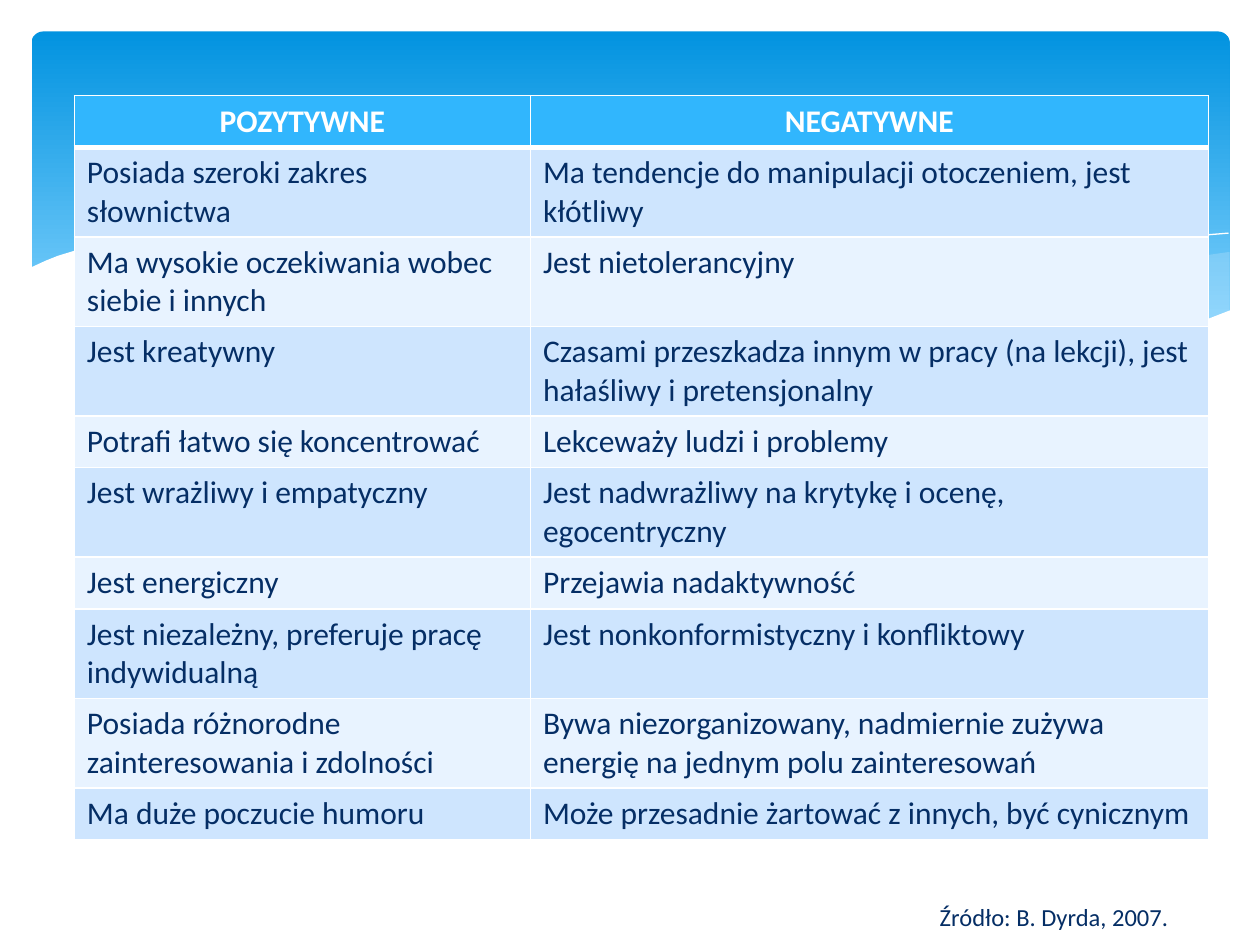
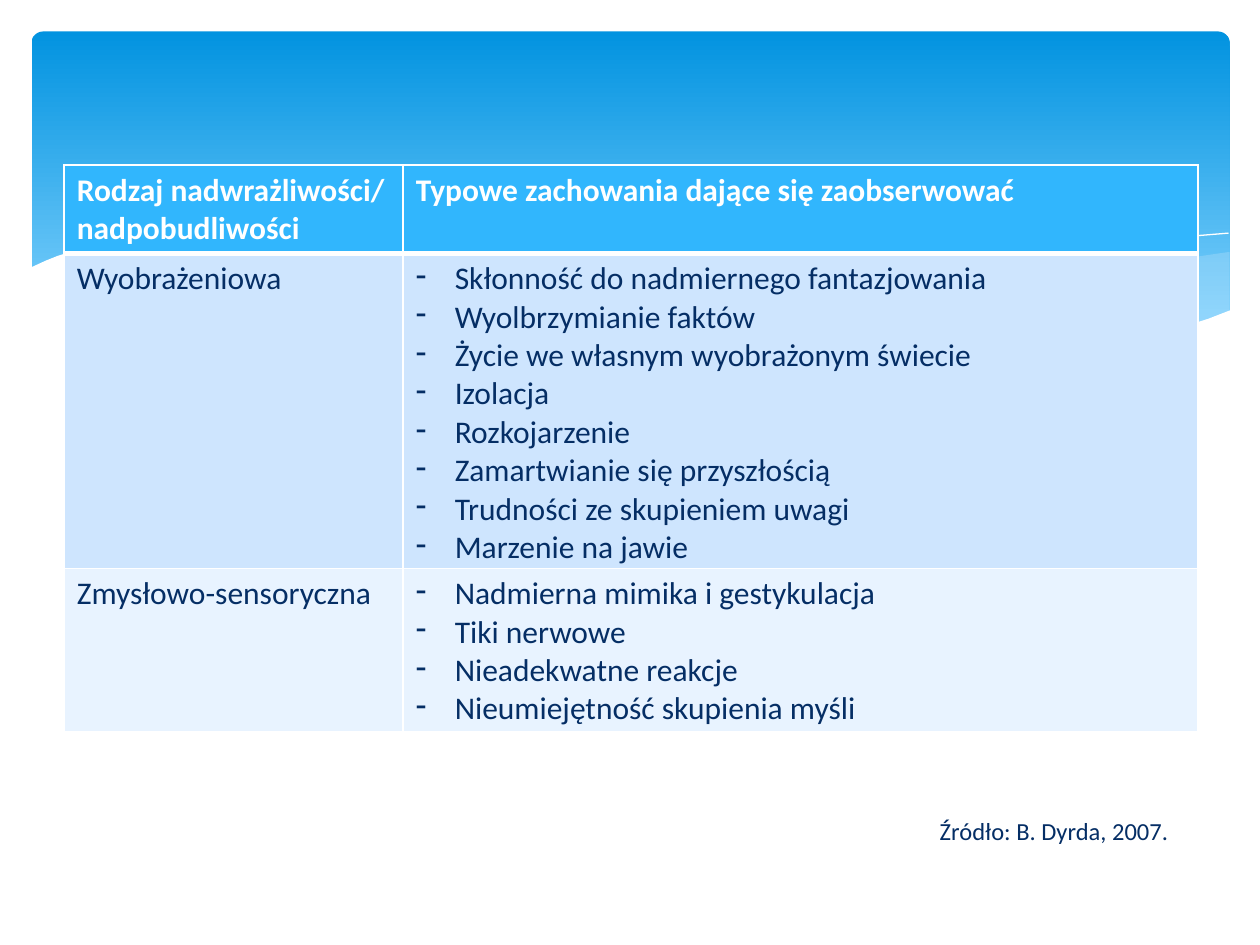
"""Build two slides with tables on giftedness traits and oversensitivity."""
from dataclasses import dataclass
from typing import Optional

from lxml.etree import SubElement
from pptx import Presentation
from pptx.dml.color import RGBColor
from pptx.enum.shapes import MSO_SHAPE
from pptx.enum.text import MSO_AUTO_SIZE, PP_ALIGN
from pptx.oxml import parse_xml
from pptx.oxml.ns import nsdecls, qn
from pptx.util import Emu, Inches, Pt

COLUMNS, ROWS = 100, 75
SLIDE_WIDTH, SLIDE_HEIGHT = Inches(10), Inches(7.5)


@dataclass(frozen=True)
class Theme:
    """Colours, font and type sizes shared by the slides."""
    font: str = "Calibri"
    ink: str = "052E65"
    paper: str = "FFFFFF"
    band_top: str = "0293E0"
    band_bottom: str = "83D3FE"
    mist: str = "C6E7FC"
    heading: str = "31B6FD"
    stripes: tuple[str, str] = ("CEE5FE", "E8F3FF")
    table_size: int = 18
    source_size: int = 14
    rule: int = 1
    heading_rule: int = 3


@dataclass(frozen=True)
class Wave:
    """An outline given in grid columns and rows, filled or drawn as a hairline."""
    points: tuple[tuple[float, float], ...]
    fill: Optional[str] = None
    opacity: int = 100


@dataclass(frozen=True)
class TraitTable:
    """A table with its place on the grid, and the row of its source note."""
    left: float
    top: float
    height: float
    widths: tuple[float, float]
    heading_align: PP_ALIGN
    entries: tuple[tuple[str, str], ...]
    source_top: float


THEME = Theme()
SOURCE = "Źródło: B. Dyrda, 2007."

WAVES = (
    Wave(((97.5, 20), (94.8, 20.4), (92.1, 21), (89.1, 21.6), (86.1, 22.3), (80.5, 23.7),
          (75.3, 24.8), (70.6, 25.7), (66.1, 26.5), (69.1, 26.9), (71.9, 27.2), (74.5, 27.5),
          (76.9, 27.7), (80.3, 27.8), (83.5, 27.7), (86.3, 27.5), (88.9, 27.2), (91.3, 26.7),
          (93.5, 26.2), (94.9, 25.7), (96.3, 25.2), (97.6, 24.7), (97.6, 20)),
         THEME.mist, 29),
    Wave(((89.3, 27.3), (86.6, 26.9), (83.7, 26.5), (80.7, 26), (77.5, 25.4), (74.1, 24.7),
          (70.6, 24), (66.8, 23.1), (62.9, 22.2), (59.8, 21.4), (56.9, 20.8), (54.1, 20.3),
          (51.4, 19.8), (48.9, 19.4), (46.5, 19.1), (44.2, 18.9), (42, 18.7), (39.9, 18.6),
          (38, 18.5), (36.1, 18.5), (32.8, 18.7), (28.6, 19.1), (32.3, 19.6), (36.2, 20.3),
          (40.4, 21.1), (44.9, 22.2), (49.1, 23.2), (53, 24), (58.4, 25.2), (63.4, 26.1),
          (68, 26.8), (72.2, 27.4), (76.1, 27.7), (79.6, 27.8), (82.8, 27.8), (85.7, 27.7),
          (89.3, 27.3)),
         THEME.mist, 40),
    Wave(((30.9, 19.5), (32.8, 19.2), (35.3, 18.9), (38.7, 18.7), (43.3, 18.7), (46.9, 18.9),
          (51, 19.2), (55.6, 19.7), (60.8, 20.4), (66.5, 21.3), (72.7, 22.6), (79.5, 24.1),
          (86.9, 26.1), (90.7, 27.2))),
    Wave(((61.3, 25.7), (65.3, 24.6), (69.5, 23.5), (74.8, 22.3), (80.6, 21), (86.6, 19.9),
          (91, 19.2), (95.1, 18.7), (97.5, 18.5))),
    Wave(((97.7, 24.6), (95.9, 25.3), (94, 25.9), (92, 26.5), (89.9, 26.9), (87.5, 27.3),
          (85, 27.5), (82.3, 27.7), (79.3, 27.6), (76.1, 27.5), (72.6, 27.2), (68.8, 26.8),
          (64.8, 26.2), (60.3, 25.4), (55.5, 24.5), (50.3, 23.3), (44.7, 22), (39.1, 20.7),
          (34, 19.7), (29.2, 19), (25, 18.6), (21.1, 18.4), (17.7, 18.4), (14.6, 18.5),
          (11.9, 18.7), (9.5, 19.1), (7.6, 19.5), (5.9, 19.9), (4.6, 20.3), (3.6, 20.7),
          (2.3, 21.3), (2.3, 32.9), (97.7, 32.9)),
         THEME.paper),
)

TABLES = (
    TraitTable(5.9, 7.6, 61.2, (36.2, 53.8), PP_ALIGN.CENTER, (
        ("POZYTYWNE", "NEGATYWNE"),
        ("Posiada szeroki zakres słownictwa",
         "Ma tendencje do manipulacji otoczeniem, jest kłótliwy"),
        ("Ma wysokie oczekiwania wobec siebie i innych", "Jest nietolerancyjny"),
        ("Jest kreatywny",
         "Czasami przeszkadza innym w pracy (na lekcji), jest hałaśliwy i pretensjonalny"),
        ("Potrafi łatwo się koncentrować", "Lekceważy ludzi i problemy"),
        ("Jest wrażliwy i empatyczny", "Jest nadwrażliwy na krytykę i ocenę, egocentryczny"),
        ("Jest energiczny", "Przejawia nadaktywność"),
        ("Jest niezależny, preferuje pracę indywidualną",
         "Jest nonkonformistyczny i konfliktowy"),
        ("Posiada różnorodne zainteresowania i zdolności",
         "Bywa niezorganizowany, nadmiernie zużywa energię na jednym polu zainteresowań"),
        ("Ma duże poczucie humoru", "Może przesadnie żartować z innych, być cynicznym"),
    ), 71.1),
    TraitTable(5.1, 13.1, 48, (26.9, 63.1), PP_ALIGN.LEFT, (
        ("Rodzaj nadwrażliwości/ nadpobudliwości", "Typowe zachowania dające się zaobserwować"),
        ("Wyobrażeniowa", "\n".join((
            "Skłonność do nadmiernego fantazjowania", "Wyolbrzymianie faktów",
            "Życie we własnym wyobrażonym świecie", "Izolacja", "Rozkojarzenie",
            "Zamartwianie się przyszłością", "Trudności ze skupieniem uwagi",
            "Marzenie na jawie"))),
        ("Zmysłowo-sensoryczna", "\n".join((
            "Nadmierna mimika i gestykulacja", "Tiki nerwowe", "Nieadekwatne reakcje",
            "Nieumiejętność skupienia myśli"))),
    ), 64.3),
)


def across(columns: float) -> Emu:
    """Turn grid columns into a length."""
    return Emu(round(SLIDE_WIDTH * columns / COLUMNS))


def down(rows: float) -> Emu:
    """Turn grid rows into a length."""
    return Emu(round(SLIDE_HEIGHT * rows / ROWS))


def paint(fill, colour: str) -> None:
    """Give a fill one solid colour."""
    fill.solid()
    fill.fore_color.rgb = RGBColor.from_string(colour)


def style_text(paragraph, size: int, colour: str, bold: bool = False) -> None:
    """Format every run of a paragraph."""
    for run in paragraph.runs:
        run.font.name = THEME.font
        run.font.size = Pt(size)
        run.font.bold = bold
        run.font.color.rgb = RGBColor.from_string(colour)


def draw_band(slide) -> None:
    """Draw the rounded gradient band at the top."""
    band = slide.shapes.add_shape(MSO_SHAPE.ROUNDED_RECTANGLE, across(2.5), down(2.5),
                                  across(95.1), down(27))
    band.adjustments[0] = 0.034
    band.shadow.inherit = False
    band.line.fill.background()
    band.fill.gradient()
    band.fill.gradient_angle = 270
    shades = ((0, THEME.band_top), (0.9, THEME.band_bottom))
    for stop, (position, colour) in zip(band.fill.gradient_stops, shades):
        stop.position = position
        stop.color.rgb = RGBColor.from_string(colour)


def draw_wave(slide, wave: Wave) -> None:
    """Draw one wave outline under the band."""
    start, *rest = [(across(x), down(y)) for x, y in wave.points]
    builder = slide.shapes.build_freeform(*start)
    builder.add_line_segments(rest, close=wave.fill is not None)
    outline = builder.convert_to_shape()
    outline.shadow.inherit = False
    if wave.fill is None:
        outline.fill.background()
        paint(outline.line.fill, THEME.paper)
        outline.line.width = Pt(0)
        return
    outline.line.fill.background()
    paint(outline.fill, wave.fill)
    if wave.opacity < 100:
        colour = outline.fill._xPr.find(qn("a:solidFill"))[0]
        SubElement(colour, qn("a:alpha")).set("val", str(wave.opacity * 1000))


def add_dash(paragraph) -> None:
    """Turn a paragraph into a dashed list item."""
    properties = paragraph._p.get_or_add_pPr()
    properties.set("marL", str(across(3.1)))
    properties.set("indent", str(-across(3.1)))
    SubElement(properties, qn("a:buChar")).set("char", "-")


def rule_cell(cell, top: int, bottom: int) -> None:
    """Draw the four borders of a cell."""
    properties = cell._tc.get_or_add_tcPr()
    widths = {"lnL": THEME.rule, "lnR": THEME.rule, "lnT": top, "lnB": bottom}
    for position, (side, width) in enumerate(widths.items()):
        properties.insert(position, parse_xml(
            f'<a:{side} {nsdecls("a")} w="{Pt(width)}"><a:solidFill>'
            f'<a:srgbClr val="{THEME.paper}"/></a:solidFill></a:{side}>'))


def fill_cell(cell, text: str, row: int, heading_align: PP_ALIGN) -> None:
    """Write and colour one cell according to its row."""
    is_heading = row == 0
    cell.text_frame.text = text
    paint(cell.fill, THEME.heading if is_heading else THEME.stripes[(row - 1) % 2])
    rule_cell(cell, THEME.heading_rule if row == 1 else THEME.rule,
              THEME.heading_rule if is_heading else THEME.rule)
    for paragraph in cell.text_frame.paragraphs:
        paragraph.alignment = heading_align if is_heading else PP_ALIGN.LEFT
        style_text(paragraph, THEME.table_size,
                   THEME.paper if is_heading else THEME.ink, is_heading)
        if "\n" in text:
            add_dash(paragraph)


def draw_table(slide, traits: TraitTable) -> None:
    """Draw the table of traits."""
    frame = slide.shapes.add_table(len(traits.entries), len(traits.widths), across(traits.left),
                                   down(traits.top), across(sum(traits.widths)),
                                   down(traits.height))
    for column, width in zip(frame.table.columns, traits.widths):
        column.width = across(width)
    for index, (row, texts) in enumerate(zip(frame.table.rows, traits.entries)):
        row.height = down(4.1)
        for cell, text in zip(row.cells, texts):
            fill_cell(cell, text, index, traits.heading_align)
    frame.height = down(traits.height)


def draw_source(slide, top: float) -> None:
    """Write the source note below the table."""
    note = slide.shapes.add_textbox(across(73.6), down(top), across(20.9), down(3.4)).text_frame
    note.text = SOURCE
    note.word_wrap = False
    note.auto_size = MSO_AUTO_SIZE.SHAPE_TO_FIT_TEXT
    style_text(note.paragraphs[0], THEME.source_size, THEME.ink)


def main() -> None:
    """Build the slides and save them."""
    deck = Presentation()
    deck.slide_width, deck.slide_height = SLIDE_WIDTH, SLIDE_HEIGHT
    for traits in TABLES:
        slide = deck.slides.add_slide(deck.slide_layouts[6])
        paint(slide.background.fill, THEME.paper)
        draw_band(slide)
        for wave in WAVES:
            draw_wave(slide, wave)
        draw_table(slide, traits)
        draw_source(slide, traits.source_top)
    deck.save("out.pptx")


if __name__ == "__main__":
    main()
